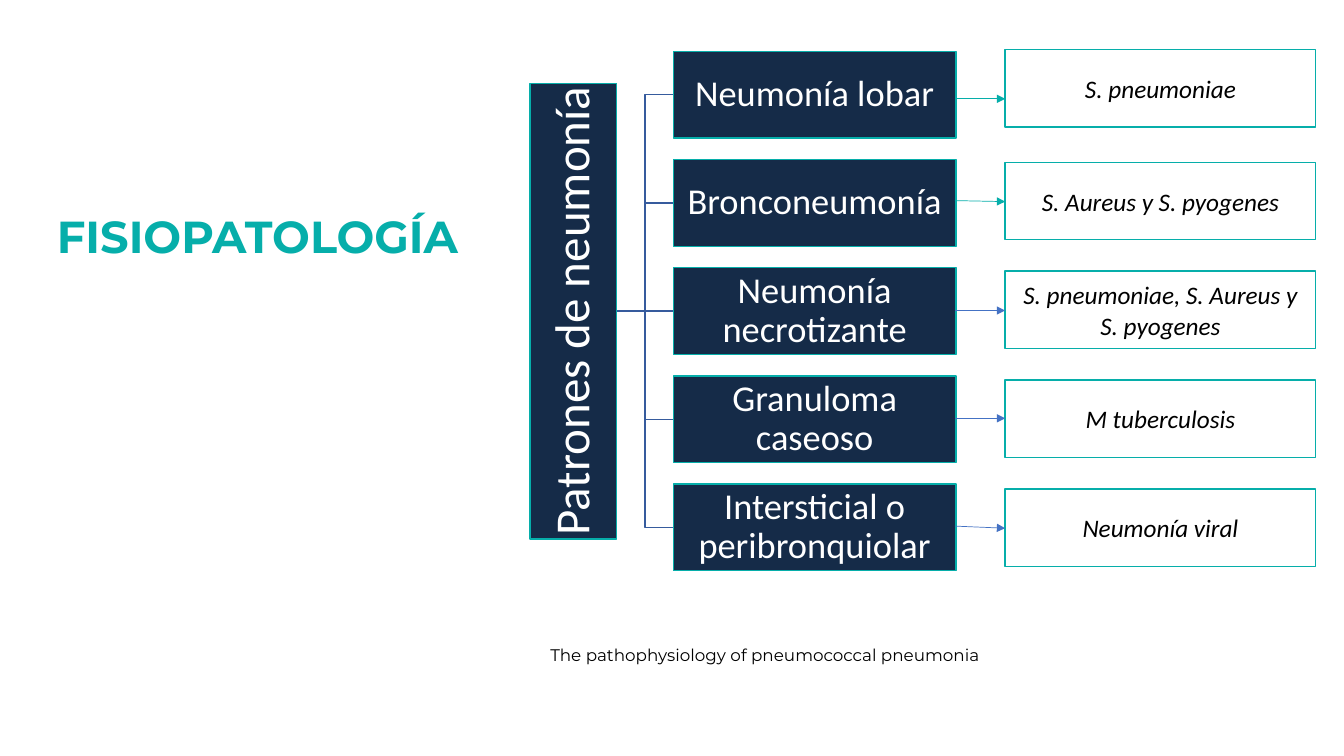
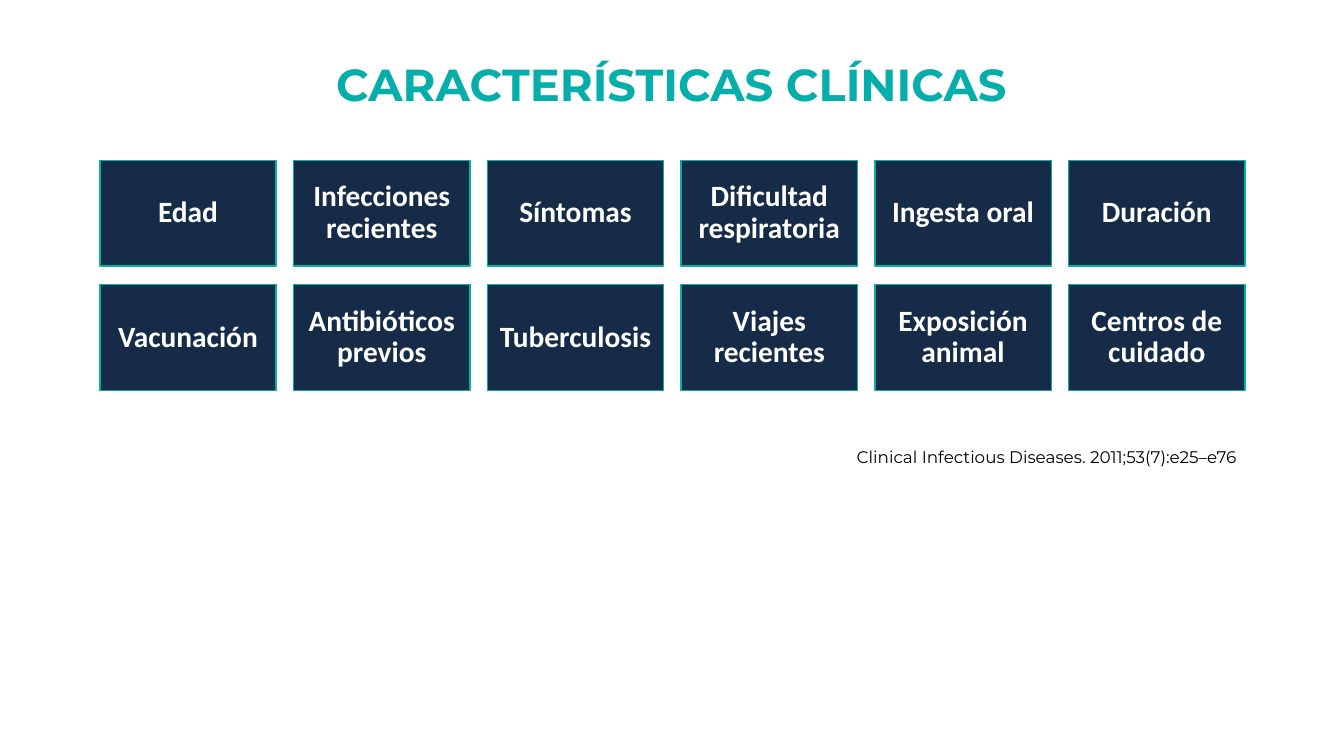
from lxml.etree import SubElement
from pptx import Presentation
from pptx.dml.color import RGBColor
from pptx.enum.shapes import MSO_CONNECTOR, MSO_SHAPE
from pptx.enum.text import MSO_ANCHOR, PP_ALIGN
from pptx.oxml.ns import qn
from pptx.util import Pt

TEAL = "06AEAA"
NAVY = "152B48"
BLUE = "4472C4"
BRACKET_BLUE = "365B9D"
WHITE = "FFFFFF"
BLACK = "000000"
TITLE_FONT = "Montserrat"
BODY_FONT = "Calibri"

ROOT_RIGHT = 440.6
PATTERN_LEFT, PATTERN_TOP, PATTERN_PITCH = 481, 36.7, 77.25
PATTERN_WIDTH, PATTERN_HEIGHT = 202, 62
GERM_LEFT, GERM_WIDTH, GERM_HEIGHT = 718, 221.8, 55.4
ARROW_LEFT = 682

PATTERNS = [
    ("Neumonía lobar", "S. pneumoniae", 35.3, 70.6, 70.6, TEAL),
    ("Bronconeumonía", "S. Aureus y S. pyogenes", 115.9, 143.3, 144, TEAL),
    ("Neumonía necrotizante", "S. pneumoniae, S. Aureus y S. pyogenes",
     193.7, 221.8, 221.8, BLUE),
    ("Granuloma caseoso", "M tuberculosis", 271.4, 298.8, 298.8, BLUE),
    ("Intersticial o peribronquiolar", "Neumonía viral", 349.2, 375.8, 377.3, BLUE),
]

FEATURE_LEFT, FEATURE_TOP = 71.3, 114.5
FEATURE_PITCH_X, FEATURE_PITCH_Y = 138.4, 88.8
FEATURE_WIDTH, FEATURE_HEIGHT = 126, 75.6

FEATURES = [
    ["Edad", "Infecciones recientes", "Síntomas", "Dificultad respiratoria",
     "Ingesta oral", "Duración"],
    ["Vacunación", "Antibióticos previos", "Tuberculosis", "Viajes recientes",
     "Exposición animal", "Centros de cuidado"],
]


def color(value):
    return RGBColor.from_string(value)


def write(shape, text, size, font, ink, bold=False, italic=False,
          align=PP_ALIGN.CENTER, anchor=MSO_ANCHOR.MIDDLE, spacing=1.0):
    frame = shape.text_frame
    frame.word_wrap = True
    frame.vertical_anchor = anchor
    paragraph = frame.paragraphs[0]
    paragraph.text = text
    paragraph.alignment = align
    paragraph.line_spacing = spacing
    paragraph.font.size = Pt(size)
    paragraph.font.name = font
    paragraph.font.bold = bold
    paragraph.font.italic = italic
    paragraph.font.color.rgb = color(ink)


def add_title(page, text, left, top, width):
    box = page.shapes.add_textbox(Pt(left), Pt(top), Pt(width), Pt(67))
    write(box, text, 32, TITLE_FONT, TEAL, bold=True, spacing=0.9)


def add_source(page, text, left, top):
    box = page.shapes.add_textbox(Pt(left), Pt(top), Pt(340), Pt(21.8))
    write(box, text, 12, TITLE_FONT, BLACK, align=PP_ALIGN.LEFT,
          anchor=MSO_ANCHOR.TOP)


def add_box(page, left, top, width, height, fill):
    box = page.shapes.add_shape(
        MSO_SHAPE.RECTANGLE, Pt(left), Pt(top), Pt(width), Pt(height))
    box.shadow.inherit = False
    box.fill.solid()
    box.fill.fore_color.rgb = color(fill)
    box.line.color.rgb = color(TEAL)
    box.line.width = Pt(1)
    return box


def add_navy_box(page, text, left, top, width, height, size, inset, bold=False):
    box = add_box(page, left, top, width, height, NAVY)
    frame = box.text_frame
    frame.margin_left = frame.margin_right = Pt(inset)
    frame.margin_top = frame.margin_bottom = Pt(inset)
    write(box, text, size, BODY_FONT, WHITE, bold=bold, spacing=0.9)
    return box


def add_line(page, kind, start, end, stroke, width):
    line = page.shapes.add_connector(
        kind, Pt(start[0]), Pt(start[1]), Pt(end[0]), Pt(end[1]))
    line.line.color.rgb = color(stroke)
    line.line.width = Pt(width)
    SubElement(line._element.spPr, qn("a:effectLst"))
    return line


def add_arrow(page, start, end, stroke):
    arrow = add_line(page, MSO_CONNECTOR.STRAIGHT, start, end, stroke, 0.5)
    SubElement(arrow.line._get_or_add_ln(), qn("a:tailEnd"), type="triangle")


def add_bracket(page, middle, center):
    kind = MSO_CONNECTOR.STRAIGHT if center == middle else MSO_CONNECTOR.ELBOW
    add_line(page, kind, (ROOT_RIGHT, middle), (PATTERN_LEFT, center),
             BRACKET_BLUE, 1)


def build_pathophysiology(page):
    add_title(page, "FISIOPATOLOGÍA", -18, 137.5, 404)
    tops = [PATTERN_TOP + row * PATTERN_PITCH for row in range(len(PATTERNS))]
    centers = [top + PATTERN_HEIGHT / 2 for top in tops]
    middle = centers[len(centers) // 2]
    for center in centers:
        add_bracket(page, middle, center)

    root_length, root_thickness = 325.4, 62
    root = add_navy_box(
        page, "Patrones de neumonía",
        ROOT_RIGHT - (root_thickness + root_length) / 2,
        middle - root_thickness / 2, root_length, root_thickness, 35, 1.5)
    root.rotation = 270

    for top, pattern in zip(tops, PATTERNS):
        name, germ, germ_top, arrow_start, arrow_end, stroke = pattern
        add_navy_box(page, name, PATTERN_LEFT, top, PATTERN_WIDTH,
                     PATTERN_HEIGHT, 26, 1.5)
        box = add_box(page, GERM_LEFT, germ_top, GERM_WIDTH, GERM_HEIGHT, WHITE)
        write(box, germ, 18, BODY_FONT, BLACK, italic=True)
        add_arrow(page, (ARROW_LEFT, arrow_start), (GERM_LEFT, arrow_end), stroke)
    add_source(page, "The pathophysiology of pneumococcal pneumonia", 386, 457)


def build_features(page):
    add_title(page, "CARACTERÍSTICAS CLÍNICAS", 218, 28.8, 523.5)
    for row, names in enumerate(FEATURES):
        for column, name in enumerate(names):
            add_navy_box(
                page, name, FEATURE_LEFT + column * FEATURE_PITCH_X,
                FEATURE_TOP + row * FEATURE_PITCH_Y,
                FEATURE_WIDTH, FEATURE_HEIGHT, 21, 6.5, bold=True)
    add_source(page, "Clinical Infectious Diseases. 2011;53(7):e25–e76", 604.8, 315.4)


def main():
    deck = Presentation()
    deck.slide_width = Pt(960)
    deck.slide_height = Pt(540)
    for build in (build_pathophysiology, build_features):
        build(deck.slides.add_slide(deck.slide_layouts[6]))
    deck.save("out.pptx")


if __name__ == "__main__":
    main()
